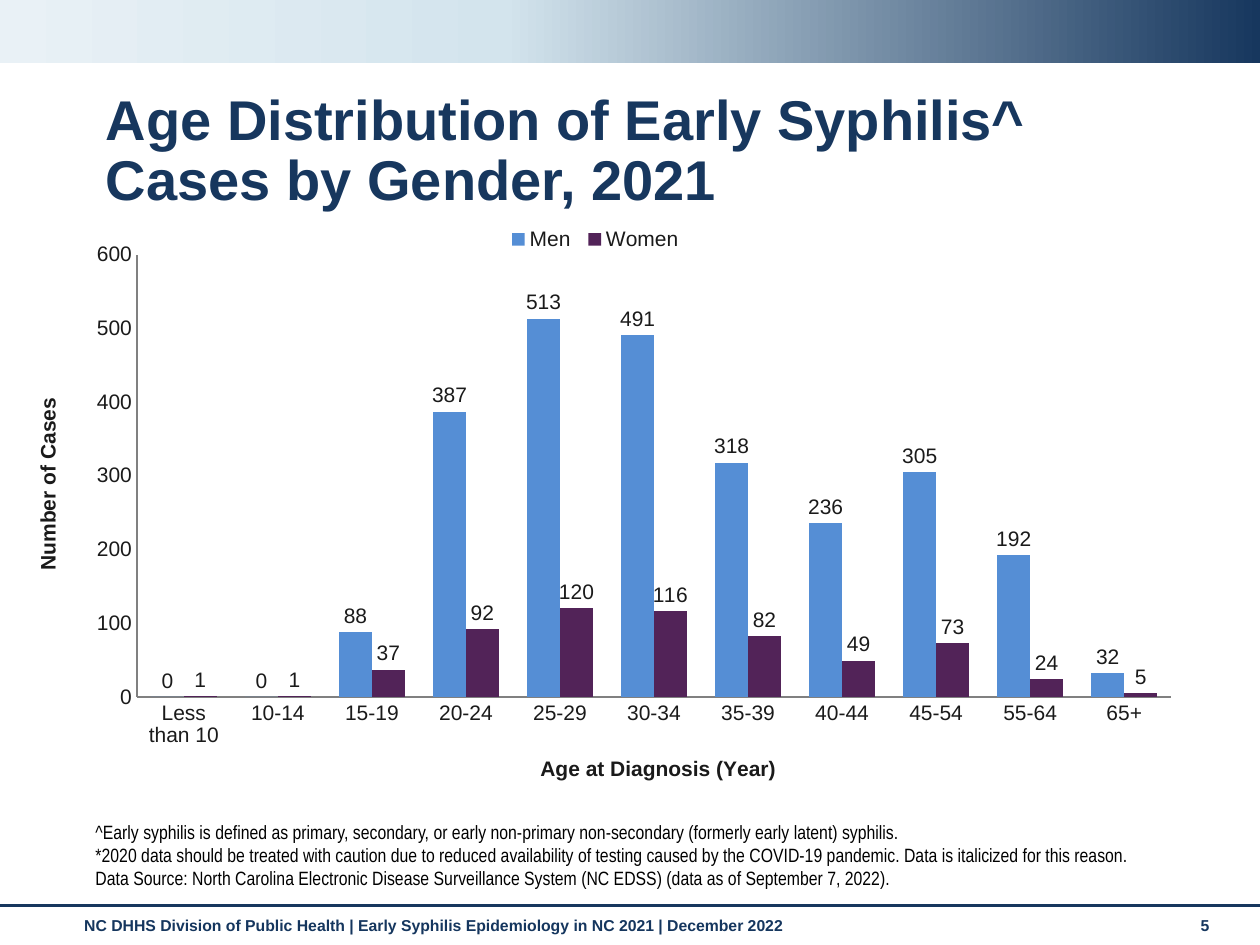
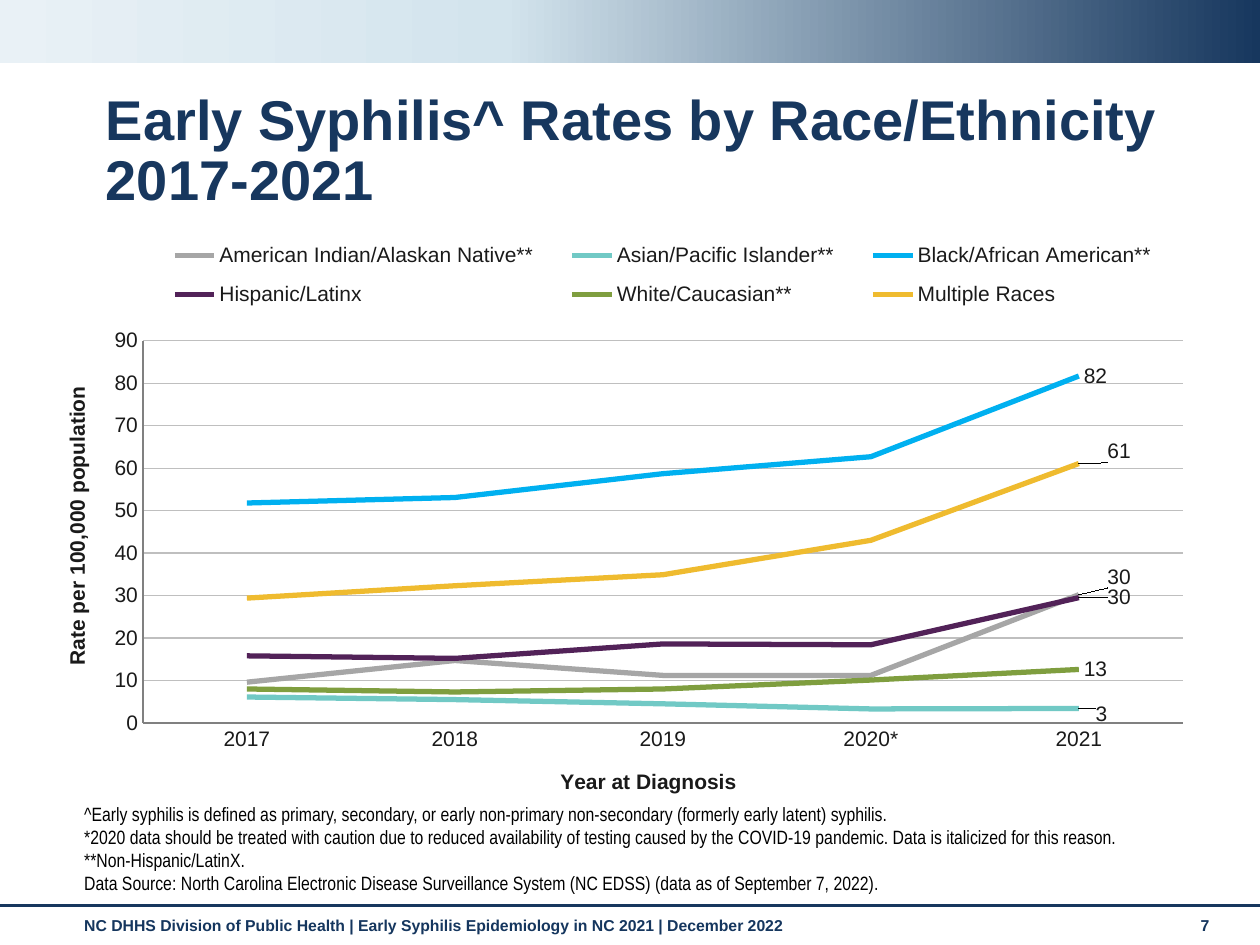
from copy import deepcopy

from pptx import Presentation
from pptx.chart.data import CategoryChartData
from pptx.dml.color import RGBColor
from pptx.enum.chart import XL_CHART_TYPE, XL_LABEL_POSITION, XL_LEGEND_POSITION, XL_TICK_MARK
from pptx.enum.shapes import MSO_CONNECTOR, MSO_SHAPE
from pptx.enum.text import MSO_ANCHOR, MSO_AUTO_SIZE, PP_ALIGN
from pptx.oxml import parse_xml
from pptx.oxml.ns import nsdecls, qn
from pptx.util import Inches, Pt

COLUMNS, LINES = XL_CHART_TYPE.COLUMN_CLUSTERED, XL_CHART_TYPE.LINE
OUTSIDE, RIGHT = XL_LABEL_POSITION.OUTSIDE_END, XL_LABEL_POSITION.RIGHT
LEGEND_TOP = XL_LEGEND_POSITION.TOP
NO_TICKS = XL_TICK_MARK.NONE
RECTANGLE, STRAIGHT = MSO_SHAPE.RECTANGLE, MSO_CONNECTOR.STRAIGHT
TOP, BOTTOM = MSO_ANCHOR.TOP, MSO_ANCHOR.BOTTOM
LEFT = PP_ALIGN.LEFT
NO_FIT = MSO_AUTO_SIZE.NONE

NAVY, FOOTER_NAVY, INK, BLACK = "17375E", "15365E", "1A1A1A", "000000"
AXIS_GRAY, GRID_GRAY = "808080", "BFBFBF"
BAND_STOPS = [(0, NAVY), (0.6, "D3E4ED"), (1, "E9F1F6")]
FONT, NOTE_FONT = "Arial", "Arial Narrow"

FOOTER = "NC DHHS Division of Public Health | Early Syphilis Epidemiology in NC 2021 | December 2022"
DEFINITION = ("^Early syphilis is defined as primary, secondary, or early non-primary "
              "non-secondary (formerly early latent) syphilis.")
CAUTION = ("*2020 data should be treated with caution due to reduced availability of testing "
           "caused by the COVID-19 pandemic. Data is italicized for this reason.")
DATA_SOURCE = ("Data Source: North Carolina Electronic Disease Surveillance System (NC EDSS) "
               "(data as of September 7, 2022).")

AGE_GROUPS = ["Less than 10", "10-14", "15-19", "20-24", "25-29", "30-34",
              "35-39", "40-44", "45-54", "55-64", "65+"]
# name, colour, values
CASES = [
    ("Men", "558ED5", [0, 0, 88, 387, 513, 491, 318, 236, 305, 192, 32]),
    ("Women", "522358", [1, 1, 37, 92, 120, 116, 82, 49, 73, 24, 5]),
]
YEARS = ["2017", "2018", "2019", "2020*", "2021"]
RATES = [
    ("American Indian/Alaskan Native**", "A6A6A6", [9.6, 14.7, 11.2, 11.2, 30.2]),
    ("Asian/Pacific Islander**", "71C9C5", [6.1, 5.5, 4.5, 3.3, 3.4]),
    ("Black/African American**", "00B0F0", [51.8, 53.1, 58.7, 62.7, 81.7]),
    ("Hispanic/Latinx", "522258", [15.8, 15.2, 18.6, 18.4, 29.5]),
    ("White/Caucasian**", "7F9E3F", [8, 7.3, 8, 10.1, 12.6]),
    ("Multiple Races", "EFBB2F", [29.4, 32.3, 34.9, 43, 61.1]),
]
# Shift of each 2021 label, as a share of the chart's size
LABEL_SHIFTS = [(0.02, -0.03), (0.01, 0.01), (0, 0), (0.02, 0), (0, 0), (0.02, -0.02)]


def rgb(color):
    return RGBColor.from_string(color)


def inches(lengths):
    return [Inches(length) for length in lengths]


def style_font(font, size, color, name=FONT, bold=False):
    font.size, font.name, font.bold = Pt(size), name, bold
    font.color.rgb = rgb(color)


# Text
def fill_frame(frame, paragraphs, size, color, name=FONT, bold=False, anchor=TOP, spacing=None):
    """Each paragraph is a string; a line feed in it is a line break."""
    frame.word_wrap, frame.auto_size, frame.vertical_anchor = True, NO_FIT, anchor
    for number, text in enumerate(paragraphs):
        para = frame.add_paragraph() if number else frame.paragraphs[0]
        para.alignment = LEFT
        if spacing:
            para.line_spacing = spacing
            para.space_before = Pt(0)
        for line_number, line in enumerate(text.split("\n")):
            if line_number:
                para.add_line_break()
            span = para.add_run()
            span.text = line
            style_font(span.font, size, color, name, bold)


def add_text(page, area, paragraphs, size, color, **style):
    box = page.shapes.add_textbox(*inches(area))
    fill_frame(box.text_frame, paragraphs, size, color, **style)


# Slide frame: band, rule, footer, title
def add_band(page):
    band = page.shapes.add_shape(RECTANGLE, *inches((0, 0, 10, 0.5)))
    band.shadow.inherit = False
    band.line.fill.background()
    band.fill.gradient()
    band.fill.gradient_angle = 180
    stop_list = band._element.spPr.find(".//" + qn("a:gsLst"))
    stop_list.append(deepcopy(stop_list[0]))
    for stop, (position, color) in zip(band.fill.gradient_stops, BAND_STOPS):
        stop.position = position
        stop.color.rgb = rgb(color)


def add_rule(page):
    rule = page.shapes.add_connector(STRAIGHT, *inches((0, 7.19, 10, 7.19)))
    rule.line.color.rgb = rgb(NAVY)
    rule.line.width = Pt(1.75)
    rule._element.spPr.append(parse_xml(f"<a:effectLst {nsdecls('a')}/>"))


def add_page(deck, title, number):
    page = deck.slides.add_slide(deck.slide_layouts[5])
    add_band(page)
    add_rule(page)
    add_text(page, (0.57, 7.22, 8.74, 0.29), [FOOTER], 9, FOOTER_NAVY, bold=True)
    add_text(page, (9.43, 7.22, 0.44, 0.3), [number], 9, FOOTER_NAVY, bold=True)
    heading = page.shapes.title
    heading.left, heading.top, heading.width, heading.height = inches((0.74, 0.68, 8.58, 0.6))
    fill_frame(heading.text_frame, [title], 32, NAVY, bold=True, spacing=0.9)
    return page


def add_notes_text(page, area, lines):
    add_text(page, area, lines, 11, BLACK, name=NOTE_FONT, anchor=BOTTOM)


# Charts
def place(element, index, x, y, size=None, inner=False, shift=False):
    """Put a manual layout into a chart element, in shares of the chart's size."""
    for old in element.findall(qn("c:layout")):
        element.remove(old)
    parts = '<c:layoutTarget val="inner"/>' if inner else ""
    if not shift:
        parts += '<c:xMode val="edge"/><c:yMode val="edge"/>'
    parts += f'<c:x val="{x}"/><c:y val="{y}"/>'
    if size:
        parts += f'<c:w val="{size[0]}"/><c:h val="{size[1]}"/>'
    element.insert(index, parse_xml(
        f"<c:layout {nsdecls('c')}><c:manualLayout>{parts}</c:manualLayout></c:layout>"))


def style_axis(axis, title, title_at):
    axis.major_tick_mark = axis.minor_tick_mark = NO_TICKS
    axis.format.line.color.rgb = rgb(AXIS_GRAY)
    axis.format.line.width = Pt(0.75)
    span = axis.axis_title.text_frame.paragraphs[0].add_run()
    span.text = title
    style_font(span.font, 12, INK, bold=True)
    place(axis.axis_title._element, 1, *title_at)


def add_chart(page, kind, area, categories, rows, plot_at, plot_size, cat_title, val_title, top, step):
    """An axis title is a pair: its text and its place."""
    data = CategoryChartData()
    data.categories = categories
    for name, _, values in rows:
        data.add_series(name, values)
    chart = page.shapes.add_chart(kind, *inches(area), data).chart
    chart.has_title = False
    style_font(chart.font, 12, INK)
    chart.has_legend = True
    chart.legend.position = LEGEND_TOP
    chart.legend.include_in_layout = False
    chart.plots[0].vary_by_categories = False
    style_axis(chart.category_axis, *cat_title)
    style_axis(chart.value_axis, *val_title)
    chart.value_axis.minimum_scale, chart.value_axis.maximum_scale = 0, top
    chart.value_axis.major_unit = step
    chart.value_axis.has_major_gridlines = False
    plot_area = chart._chartSpace.find(".//" + qn("c:plotArea"))
    place(plot_area, 0, *plot_at, size=plot_size, inner=True)
    return chart


def style_columns(chart, rows):
    chart.plots[0].gap_width = 86
    for series, (_, color, _) in zip(chart.series, rows):
        series.format.fill.solid()
        series.format.fill.fore_color.rgb = rgb(color)
        series.data_labels.show_value = True
        series.data_labels.position = OUTSIDE


def label_last_point(series, index, shift):
    labels = series.data_labels
    labels.show_value = False
    series.points[index].data_label.position = RIGHT
    label = labels._element.find(qn("c:dLbl"))
    label.insert(1, parse_xml(f'<c:numFmt {nsdecls("c")} formatCode="0" sourceLinked="0"/>'))
    if any(shift):
        place(label, 1, *shift, shift=True)
    # Leader lines from moved labels
    labels._element.append(parse_xml(
        f'<c:extLst {nsdecls("c")}><c:ext uri="{{CE6537A1-D6FC-4f65-9D91-7224C49458BB}}" '
        'xmlns:c15="http://schemas.microsoft.com/office/drawing/2012/chart">'
        '<c15:showLeaderLines val="1"/></c:ext></c:extLst>'))


def style_lines(chart, rows, shifts):
    for series, (_, color, values), shift in zip(chart.series, rows, shifts):
        series.smooth = False
        series.format.line.color.rgb = rgb(color)
        series.format.line.width = Pt(3)
        label_last_point(series, len(values) - 1, shift)
    chart.value_axis.has_major_gridlines = True
    grid_line = chart.value_axis.major_gridlines.format.line
    grid_line.color.rgb = rgb(GRID_GRAY)
    grid_line.width = Pt(0.75)


def main():
    deck = Presentation()
    deck.slide_width, deck.slide_height = inches((10, 7.5))

    # Cases by age and gender; the legend sits just below the title
    page = add_page(deck, "Age Distribution of Early Syphilis^ Cases by Gender, 2021", "5")
    chart = add_chart(page, COLUMNS, (0.06, 1.54, 9.33, 4.81), AGE_GROUPS, CASES,
                      (0.11, 0.1), (0.88, 0.73),
                      ("Age at Diagnosis (Year)", (0.45, 0.92)),
                      ("Number of Cases", (0.02, 0.33)), 600, 100)
    style_columns(chart, CASES)
    place(chart.legend._element, 1, 0.42, 0.05, size=(0.16, 0.05))
    add_notes_text(page, (0.66, 6.57, 8.74, 0.54), [DEFINITION, CAUTION, DATA_SOURCE])

    # Rates by race and ethnicity
    page = add_page(deck, "Early Syphilis^ Rates by Race/Ethnicity\n2017-2021", "7")
    chart = add_chart(page, LINES, (0.29, 1.71, 9.38, 4.74), YEARS, RATES,
                      (0.09, 0.21), (0.88, 0.64),
                      ("Year at Diagnosis", (0.44, 0.92)),
                      ("Rate per 100,000 population", (0.02, 0.28)), 90, 10)
    style_lines(chart, RATES, LABEL_SHIFTS)
    place(chart.legend._element, 1, 0.09, 0.02, size=(0.88, 0.16))
    add_notes_text(page, (0.57, 6.79, 8.74, 0.36),
                   [DEFINITION, CAUTION, "**Non-Hispanic/LatinX.", DATA_SOURCE])

    deck.save("out.pptx")


if __name__ == "__main__":
    main()
